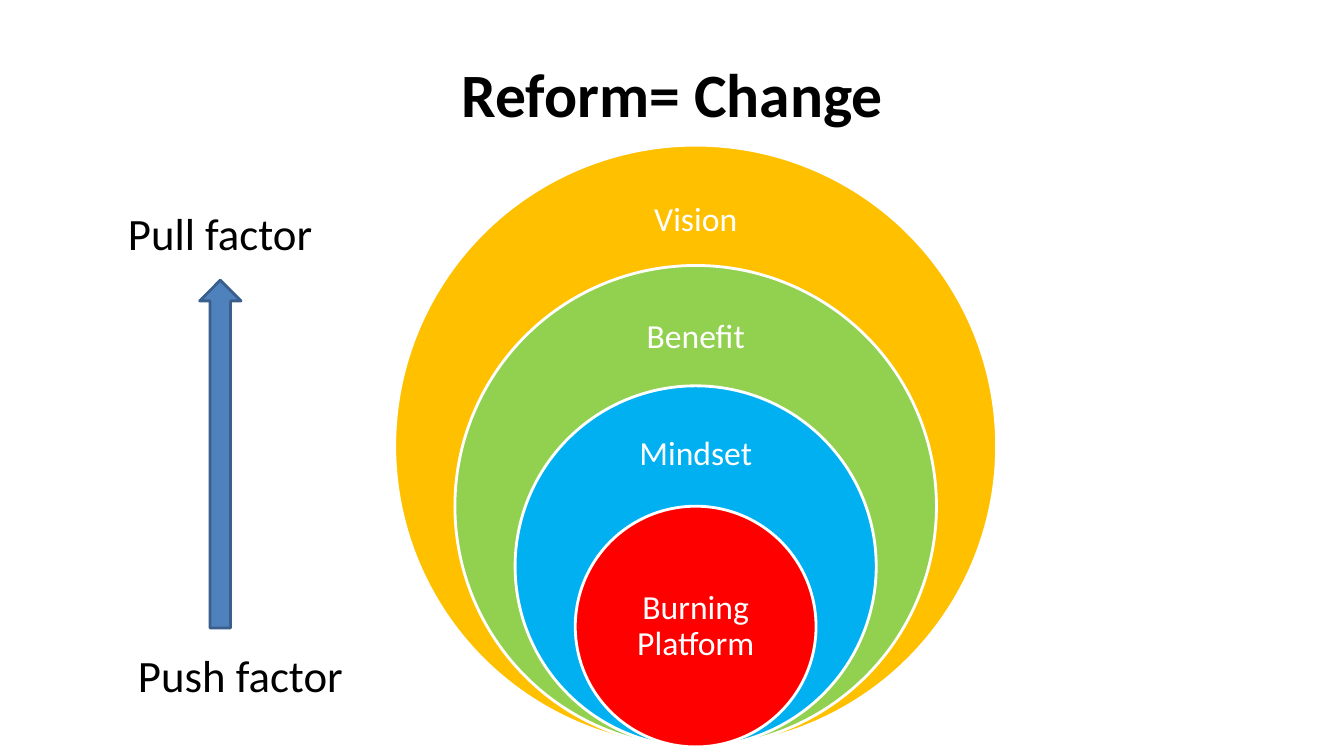
import pptx
import pptx.util
import pptx.dml.color
import pptx.enum.shapes
import pptx.enum.text

Inches = pptx.util.Inches
Pt = pptx.util.Pt
RGBColor = pptx.dml.color.RGBColor
Shape = pptx.enum.shapes.MSO_SHAPE
Align = pptx.enum.text.PP_ALIGN
Anchor = pptx.enum.text.MSO_ANCHOR
Fit = pptx.enum.text.MSO_AUTO_SIZE

BLACK = RGBColor(0x00, 0x00, 0x00)
WHITE = RGBColor(0xFF, 0xFF, 0xFF)
GOLD = RGBColor(0xFF, 0xC0, 0x00)
GREEN = RGBColor(0x92, 0xD0, 0x50)
SKY = RGBColor(0x00, 0xB0, 0xF0)
RED = RGBColor(0xFF, 0x00, 0x00)
BLUE = RGBColor(0x4F, 0x81, 0xBD)
NAVY = RGBColor(0x3A, 0x5F, 0x8C)


class Board:
    font = "Calibri"
    edge = 2

    def __init__(self, deck):
        self.slide = deck.slides.add_slide(deck.slide_layouts[5])

    def words(self, frame, text, size, color, bold=False):
        para = frame.paragraphs[0]
        run = para.add_run()
        run.text = text
        run.font.name = self.font
        run.font.size = Pt(size)
        run.font.bold = bold
        run.font.color.rgb = color
        return para

    def title(self, text, box):
        head = self.slide.shapes.title
        head.left, head.top, head.width, head.height = map(Inches, box)
        head.text_frame.vertical_anchor = Anchor.MIDDLE
        para = self.words(head.text_frame, text, 44, BLACK, True)
        para.alignment = Align.CENTER

    def shape(self, kind, box, fill, line):
        item = self.slide.shapes.add_shape(kind, *map(Inches, box))
        item.shadow.inherit = False
        item.fill.solid()
        item.fill.fore_color.rgb = fill
        item.line.color.rgb = line
        item.line.width = Pt(self.edge)
        return item

    def label(self, text, box):
        frame = self.slide.shapes.add_textbox(*map(Inches, box)).text_frame
        frame.word_wrap = True
        frame.vertical_anchor = Anchor.MIDDLE
        frame.margin_left = frame.margin_right = Inches(0.19)
        frame.margin_top = frame.margin_bottom = Inches(0.19)
        para = self.words(frame, text, 24, WHITE)
        para.alignment = Align.CENTER
        para.line_spacing = 0.9

    def note(self, text, box):
        frame = self.slide.shapes.add_textbox(*map(Inches, box)).text_frame
        frame.word_wrap = False
        frame.auto_size = Fit.SHAPE_TO_FIT_TEXT
        self.words(frame, text, 32, BLACK)


def main():
    deck = pptx.Presentation()
    deck.slide_width = Inches(13.33)
    deck.slide_height = Inches(7.5)
    board = Board(deck)
    board.title("Reform= Change", (0.67, 0.3, 12, 1.25))

    middle, base, full, width = 6.9, 7.41, 5.97, 1.69
    rings = [
        ("Vision", GOLD, 1.74, 0.89),
        ("Benefit", GREEN, 2.92, 0.86),
        ("Mindset", SKY, 4.1, 0.81),
        ("Burning Platform", RED, 5.62, 1.19),
    ]
    for rank, (text, fill, top, height) in enumerate(rings):
        size = full * (1 - 0.2 * rank)
        ring = (middle - size / 2, base - size, size, size)
        board.shape(Shape.OVAL, ring, fill, WHITE)
        board.label(text, (middle - width / 2, top, width, height))

    board.note("Pull factor", (1.17, 1.99, 2.05, 0.64))
    board.note("Push factor", (1.27, 6.38, 2.26, 0.64))
    arrow = board.shape(Shape.RIGHT_ARROW, (0.46, 4.3, 3.45, 0.41), BLUE, NAVY)
    arrow.rotation = 270
    deck.save("out.pptx")


if __name__ == "__main__":
    main()
